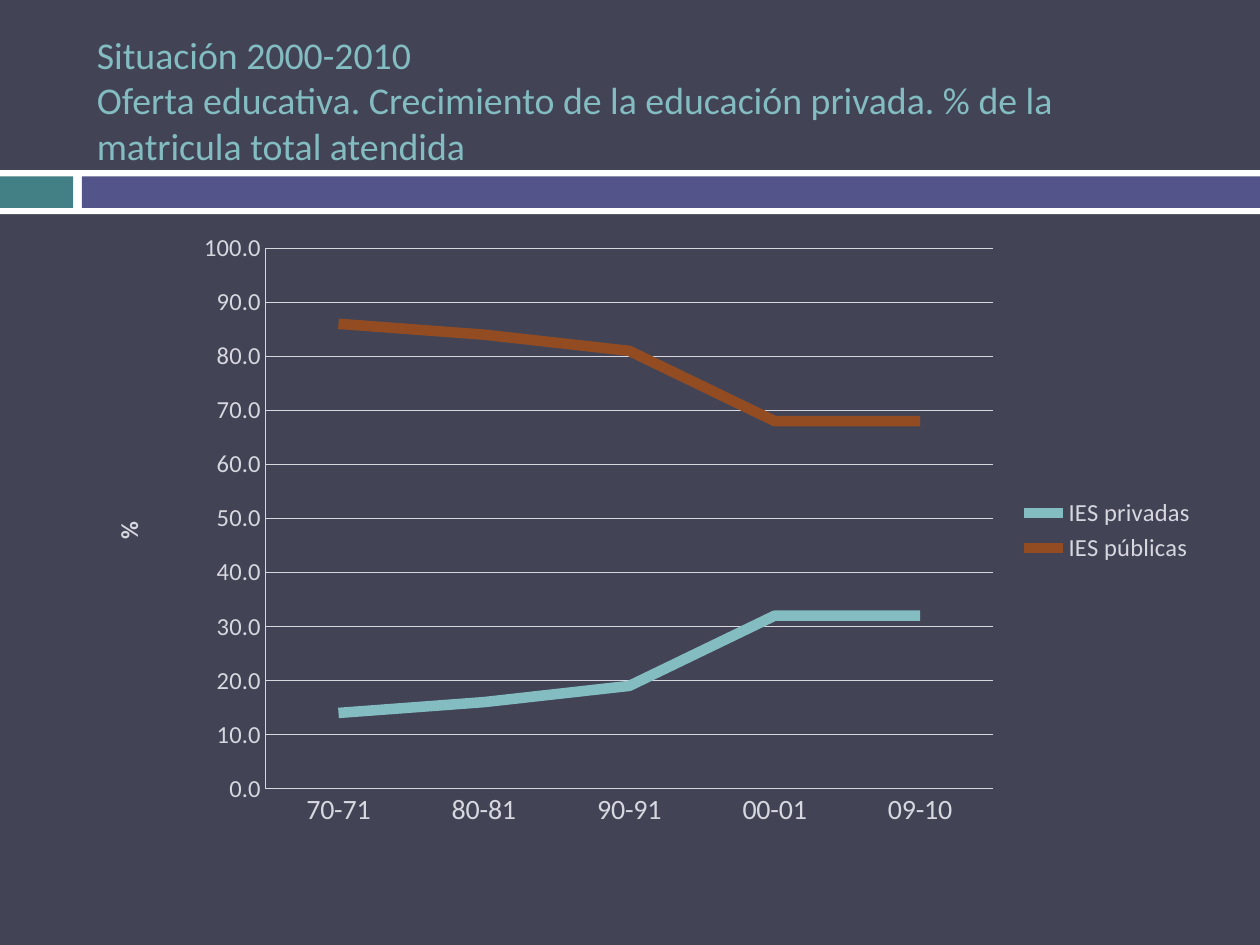
from lxml import etree
from pptx import Presentation
from pptx.chart.data import CategoryChartData
from pptx.dml.color import RGBColor
from pptx.enum.chart import XL_CHART_TYPE, XL_LEGEND_POSITION, XL_TICK_MARK
from pptx.enum.shapes import MSO_SHAPE
from pptx.enum.text import MSO_ANCHOR
from pptx.oxml.ns import qn
from pptx.util import Inches, Pt

RECT = MSO_SHAPE.RECTANGLE
LINE = XL_CHART_TYPE.LINE
RIGHT = XL_LEGEND_POSITION.RIGHT
NO_TICK = XL_TICK_MARK.NONE
MIDDLE = MSO_ANCHOR.MIDDLE

SLATE = RGBColor(0x42, 0x44, 0x56)
WHITE = RGBColor(0xFF, 0xFF, 0xFF)
TEAL = RGBColor(0x43, 0x80, 0x86)
PURPLE = RGBColor(0x53, 0x54, 0x8A)
AQUA = RGBColor(0x83, 0xBC, 0xC1)
RUST = RGBColor(0x93, 0x4C, 0x22)
PALE = RGBColor(0xD6, 0xD7, 0xDF)
FONT = "Calibri"

TITLE = ("Situación 2000-2010",
         "Oferta educativa. Crecimiento de la educación privada. "
         "% de la matricula total atendida")
CATEGORIES = ("70-71", "80-81", "90-91", "00-01", "09-10")
SERIES = (
    ("IES privadas", (14, 16, 19, 32, 32), AQUA),
    ("IES públicas", (86, 84, 81, 68, 68), RUST),
)


def set_font(font, size, color, bold=False):
    values = {"name": FONT, "size": Pt(size), "bold": bold}
    for name, value in values.items():
        setattr(font, name, value)
    font.color.rgb = color


def set_layout(parent, **values):
    """Place a chart part by fractions of the chart's size."""
    layout = parent.find(qn("c:layout"))
    if layout is None:
        layout = etree.Element(qn("c:layout"))
        text = parent.find(qn("c:tx"))
        parent.insert(0 if text is None else parent.index(text) + 1, layout)
    for child in list(layout):
        layout.remove(child)
    manual = etree.SubElement(layout, qn("c:manualLayout"))
    if "w" in values:
        etree.SubElement(manual, qn("c:layoutTarget")).set("val", "inner")
    for name in ("x", "y"):
        etree.SubElement(manual, qn(f"c:{name}Mode")).set("val", "edge")
    for name, value in values.items():
        etree.SubElement(manual, qn(f"c:{name}")).set("val", str(value))


def add_band(s, left, top, width, height):
    """White strip holding a short teal block and a long purple one."""
    margin, block, gap = 0.05, 0.58, 0.07
    start = left + block + gap
    inner_top, inner_height = top + margin, height - 2 * margin
    parts = (
        (left, top, width, height, WHITE),
        (left, inner_top, block, inner_height, TEAL),
        (start, inner_top, left + width - start, inner_height, PURPLE),
    )
    for *box, color in parts:
        sp = s.shapes.add_shape(RECT, *map(Inches, box))
        sp.shadow.inherit = False
        sp.fill.solid()
        sp.fill.fore_color.rgb = color
        sp.line.fill.background()


def add_title(s, left, top, width, height):
    sp = s.shapes.add_textbox(*map(Inches, (left, top, width, height)))
    tf = sp.text_frame
    tf.word_wrap = True
    tf.vertical_anchor = MIDDLE
    p = tf.paragraphs[0]
    for i, text in enumerate(TITLE):
        if i:
            p.add_line_break()
        r = p.add_run()
        r.text = text
        set_font(r.font, 21.6, AQUA)


def style_line(line, color, width):
    line.color.rgb = color
    line.width = Pt(width)


def style_axis(axis, size):
    axis.major_tick_mark = axis.minor_tick_mark = NO_TICK
    set_font(axis.tick_labels.font, size, PALE)
    style_line(axis.format.line, PALE, 0.75)


def add_enrolment_chart(s, left, top, width, height):
    data = CategoryChartData(number_format="0.0")
    data.categories = CATEGORIES
    for name, values, _ in SERIES:
        data.add_series(name, values)
    box = map(Inches, (left, top, width, height))
    chart = s.shapes.add_chart(LINE, *box, data).chart
    set_font(chart.font, 10, PALE)
    chart.has_title = False

    plot = chart.plots[0]
    plot.vary_by_categories = False
    for series, (_, _, color) in zip(plot.series, SERIES):
        series.smooth = False
        style_line(series.format.line, color, 6)

    style_axis(chart.category_axis, 16)
    axis = chart.value_axis
    style_axis(axis, 14)
    axis.minimum_scale, axis.maximum_scale, axis.major_unit = 0, 100, 10
    axis.tick_labels.number_format = "0.0"
    axis.tick_labels.number_format_is_linked = False
    style_line(axis.major_gridlines.format.line, PALE, 0.75)

    p = axis.axis_title.text_frame.paragraphs[0]
    r = p.add_run()
    r.text = "%"
    set_font(r.font, 14, PALE, bold=True)

    chart.has_legend = True
    chart.legend.position = RIGHT
    chart.legend.include_in_layout = False
    set_font(chart.legend.font, 14, PALE)

    plot_area = chart.element.find(".//" + qn("c:plotArea"))
    set_layout(plot_area, x=1.44 / width, y=0.22 / height,
               w=5.77 / width, h=4.29 / height)
    set_layout(plot_area.find(".//" + qn("c:title")),
               x=0.18 / width, y=2.35 / height)


def main():
    prs = Presentation()
    prs.slide_width, prs.slide_height = Inches(10), Inches(7.5)
    s = prs.slides.add_slide(prs.slide_layouts[6])
    s.background.fill.solid()
    s.background.fill.fore_color.rgb = SLATE
    add_band(s, 0, 1.35, 10, 0.35)
    add_title(s, 0.67, 0.25, 8.92, 1.08)
    add_enrolment_chart(s, 0.67, 1.75, 8.92, 4.92)
    prs.save("out.pptx")


if __name__ == "__main__":
    main()
